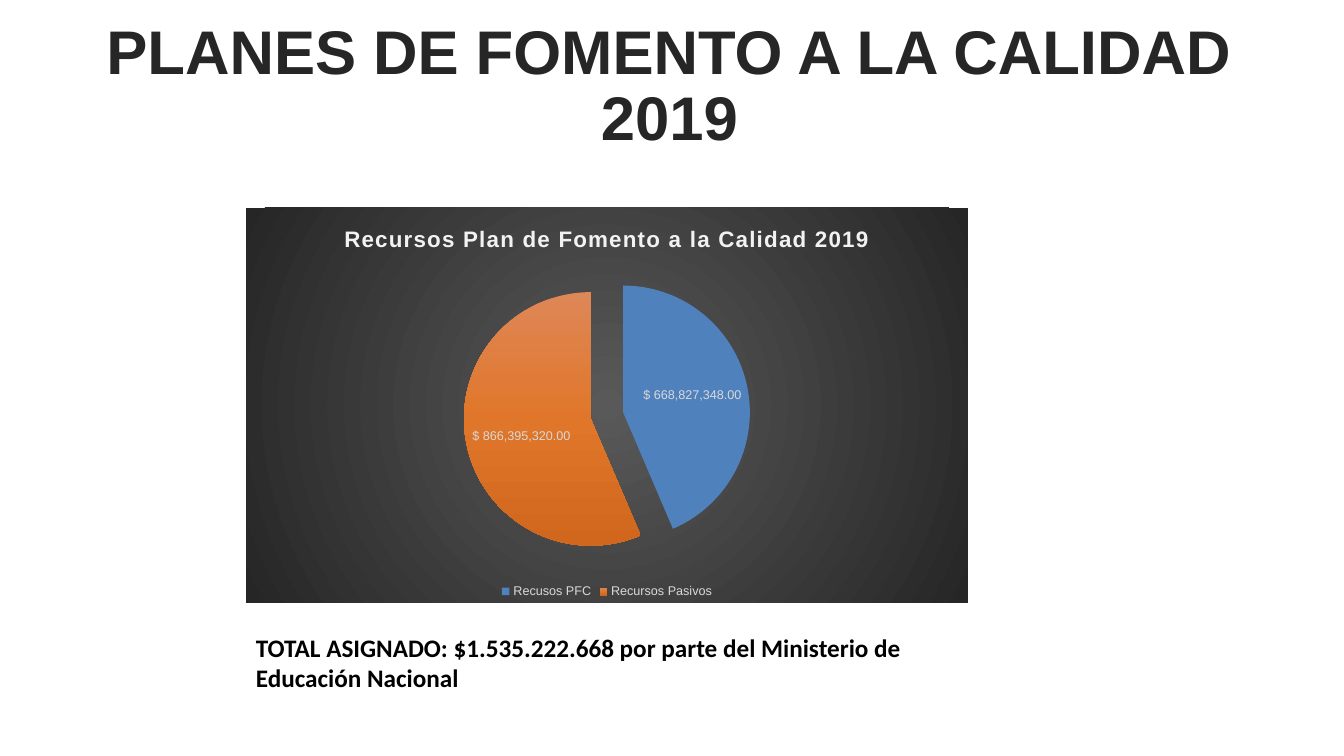
from dataclasses import dataclass

from pptx import Presentation
from pptx.chart.data import CategoryChartData
from pptx.dml.color import RGBColor
from pptx.enum.chart import XL_CHART_TYPE, XL_LABEL_POSITION, XL_LEGEND_POSITION
from pptx.enum.text import MSO_ANCHOR, PP_ALIGN
from pptx.oxml import parse_xml
from pptx.oxml.ns import nsdecls, qn
from pptx.util import Inches, Pt

PIE = XL_CHART_TYPE.PIE_EXPLODED
INSIDE_END = XL_LABEL_POSITION.INSIDE_END
BOTTOM = XL_LEGEND_POSITION.BOTTOM
MIDDLE, TOP = MSO_ANCHOR.MIDDLE, MSO_ANCHOR.TOP
CENTER, LEFT = PP_ALIGN.CENTER, PP_ALIGN.LEFT


@dataclass(frozen=True)
class Theme:
    heading_font: str = "Arial"
    body_font: str = "Calibri"
    heading_color: str = "262626"
    body_color: str = "000000"
    chart_title_color: str = "F2F2F2"
    label_color: str = "D9D9D9"
    pasivos_color: str = "1F497D"
    heading_size: int = 44
    body_size: int = 18
    chart_title_size: int = 16
    label_size: int = 9
    backdrop_stops: tuple = ((0, "595959"), (100, "262626"))
    backdrop_shade: str = (
        '<a:path path="circle"><a:fillToRect l="50000" t="50000" r="50000" b="50000"/></a:path>'
    )
    pfc_stops: tuple = ((0, "DE8757"), (50, "E0762A"), (100, "D1671C"))
    pfc_shade: str = '<a:lin ang="5400000" scaled="0"/>'


class SlideBuilder:
    def __init__(self, page, theme):
        self.page = page
        self.theme = theme

    def apply(self, target, formats):
        for name, value in formats.items():
            setattr(target, name, value)

    def style_font(self, font, name, size, color, bold=False):
        self.apply(font, {"name": name, "size": Pt(size), "bold": bold})
        font.color.rgb = RGBColor.from_string(color)

    def gradient_properties(self, stops, shade):
        marks = "".join(
            f'<a:gs pos="{percent * 1000}"><a:srgbClr val="{color}"/></a:gs>'
            for percent, color in stops
        )
        return parse_xml(
            f'<c:spPr {nsdecls("c", "a")}><a:gradFill rotWithShape="1"><a:gsLst>{marks}</a:gsLst>'
            f"{shade}</a:gradFill><a:ln><a:noFill/></a:ln></c:spPr>"
        )

    def text(self, bounds, words, font, frame_format, paragraph_format):
        box = self.page.shapes.add_textbox(*map(Inches, bounds))
        self.apply(box.text_frame, {"word_wrap": True, **frame_format})
        para = box.text_frame.paragraphs[0]
        self.apply(para, paragraph_format)
        span = para.add_run()
        span.text = words
        self.style_font(span.font, *font, bold=True)

    def pie(self, bounds, title, series_name, values, number_format):
        theme = self.theme
        label_font = (theme.heading_font, theme.label_size, theme.label_color)
        data = CategoryChartData(number_format=number_format)
        data.categories = list(values)
        data.add_series(series_name, list(values.values()))
        chart = self.page.shapes.add_chart(PIE, *map(Inches, bounds), data).chart
        self.style_font(chart.font, *label_font)
        chart.element.find(qn("c:txPr")).addprevious(
            self.gradient_properties(theme.backdrop_stops, theme.backdrop_shade)
        )
        self.chart_title(chart, title)
        self.apply(chart, {"has_legend": True})
        self.apply(chart.legend, {"position": BOTTOM, "include_in_layout": False})
        self.style_font(chart.legend.font, *label_font)

        plot = chart.plots[0]
        self.apply(plot, {"vary_by_categories": True, "has_data_labels": True})
        label_format = {
            "show_value": True,
            "number_format": number_format,
            "number_format_is_linked": False,
            "position": INSIDE_END,
        }
        self.apply(plot.data_labels, label_format)
        self.style_font(plot.data_labels.font, *label_font)
        self.slices(plot.series[0])

    def chart_title(self, chart, title):
        theme = self.theme
        chart.has_title = True
        chart.chart_title.include_in_layout = False
        span = chart.chart_title.text_frame.paragraphs[0].add_run()
        span.text = title
        self.style_font(
            span.font, theme.heading_font, theme.chart_title_size, theme.chart_title_color, True
        )
        span.font._element.set("spc", "100")

    def slices(self, series):
        theme = self.theme
        for explosion in series._element.findall(qn("c:explosion")):
            explosion.set("val", "13")
        pasivos = series.points[1].format
        pasivos.fill.solid()
        pasivos.fill.fore_color.rgb = RGBColor.from_string(theme.pasivos_color)
        pasivos.line.fill.background()
        series.points[0].format.line.fill.background()
        pfc_point = series._element.find(qn("c:dPt"))
        pfc_point.replace(
            pfc_point.find(qn("c:spPr")),
            self.gradient_properties(theme.pfc_stops, theme.pfc_shade),
        )


def main():
    deck = Presentation()
    deck.slide_width, deck.slide_height = Inches(13.33), Inches(7.5)
    theme = Theme()
    builder = SlideBuilder(deck.slides.add_slide(deck.slide_layouts[6]), theme)
    builder.text(
        (0.28, 0.23, 12.72, 1.28),
        "PLANES DE FOMENTO A LA CALIDAD 2019",
        (theme.heading_font, theme.heading_size, theme.heading_color),
        {"vertical_anchor": MIDDLE},
        {"alignment": CENTER, "line_spacing": 0.9, "space_before": Pt(10)},
    )
    builder.pie(
        (2.44, 2.06, 7.16, 3.92),
        "Recursos Plan de Fomento a la Calidad 2019",
        "Series 1",
        {"Recusos PFC": 668827348, "Recursos Pasivos": 866395320},
        r"[$$-240A]\ #,##0.00",
    )
    builder.text(
        (2.44, 6.22, 7.24, 0.71),
        "TOTAL ASIGNADO: $1.535.222.668 por parte del Ministerio de Educación Nacional",
        (theme.body_font, theme.body_size, theme.body_color),
        {"vertical_anchor": TOP},
        {"alignment": LEFT},
    )
    deck.save("out.pptx")


if __name__ == "__main__":
    main()
